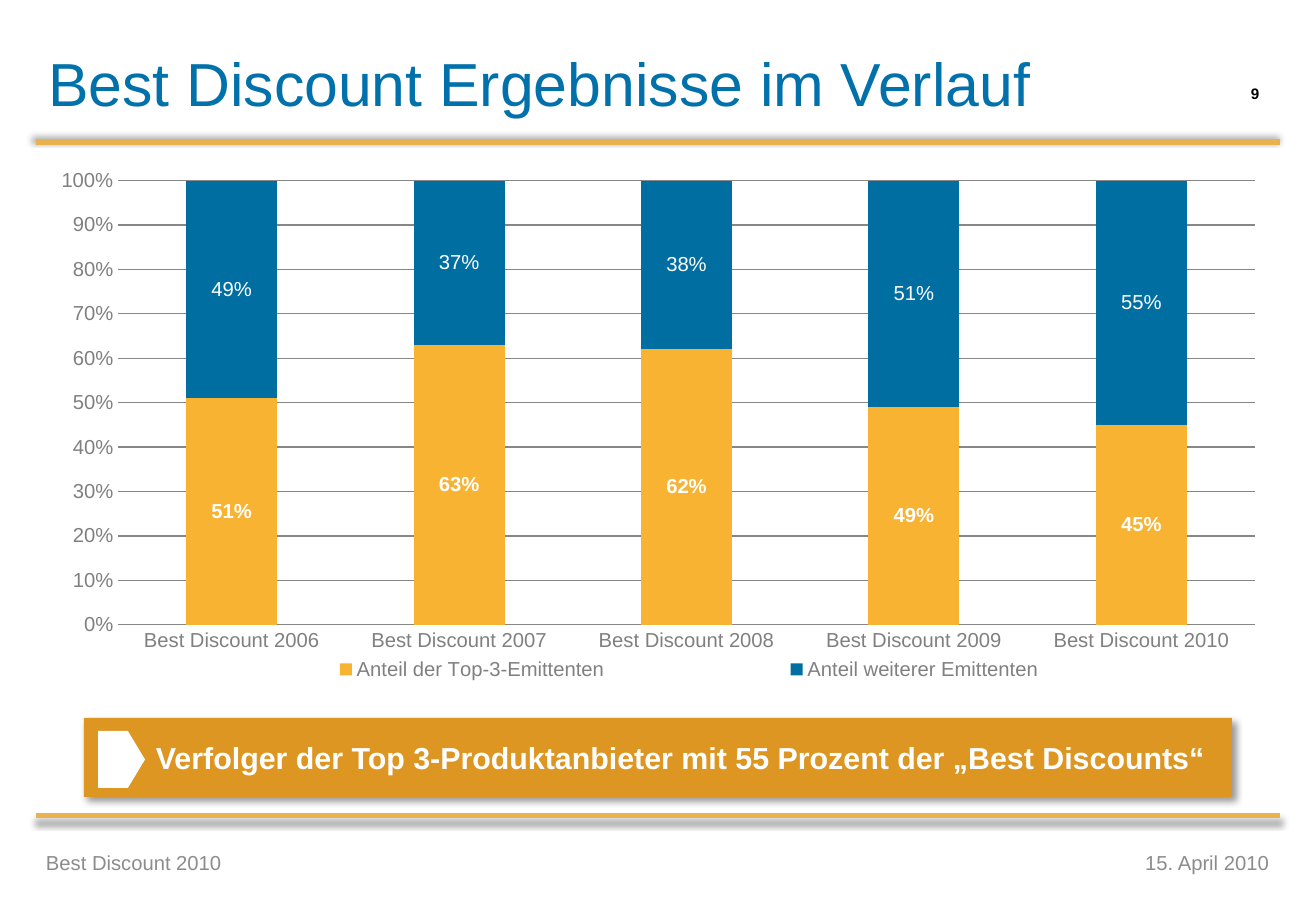
from lxml.etree import SubElement
from pptx import Presentation
from pptx.chart.data import CategoryChartData
from pptx.dml.color import RGBColor
from pptx.enum.chart import XL_CHART_TYPE, XL_LABEL_POSITION, XL_LEGEND_POSITION, XL_TICK_MARK
from pptx.enum.shapes import MSO_CONNECTOR, MSO_SHAPE
from pptx.enum.text import MSO_ANCHOR, PP_ALIGN
from pptx.oxml.ns import qn
from pptx.util import Pt

PX = 7526
FONT = "Arial"
GOLD, GRAY, GRID, WHITE = "E8B24E", "808080", "878787", "FFFFFF"
YEARS = range(2006, 2011)
SERIES = [
    ("Anteil der Top-3-Emittenten", (0.51, 0.63, 0.62, 0.49, 0.45), "F8B333", True),
    ("Anteil weiterer Emittenten", (0.49, 0.37, 0.38, 0.51, 0.55), "006EA1", False),
]
TEXTS = [
    ("Best Discount Ergebnisse im Verlauf", (36, 34, 1134, 96), dict(size=36, color="0071AA")),
    ("15. April 2010", (926, 838, 355, 48), dict(color="8C8C8C", align=PP_ALIGN.RIGHT)),
    ("Best Discount 2010", (34, 838, 417, 48), dict(color="8C8C8C")),
    ("9", (1222, 74, 66, 38), dict(size=9, color="000000", bold=True, align=PP_ALIGN.CENTER)),
]
RULES = [(142, 225), (816, 90)]
CLAIM = "Verfolger der Top 3-Produktanbieter mit 55 Prozent der „Best Discounts“"
PLOT = dict(x=0.066, y=0.04, w=0.914, h=0.818)
LEGEND = dict(x=0.1, y=0.91, w=0.85, h=0.06)


def px(*values):
    return [value * PX for value in values]


def rgb(color):
    return RGBColor.from_string(color)


def style(font, size=12, color=GRAY, bold=False):
    font.name, font.size, font.bold = FONT, Pt(size), bold
    font.color.rgb = rgb(color)


def write(text, shape, align=PP_ALIGN.LEFT, inset=(12, 6, 12, 6), **format):
    frame = shape.text_frame
    frame.word_wrap = True
    frame.vertical_anchor = MSO_ANCHOR.MIDDLE
    frame.margin_left, frame.margin_top, frame.margin_right, frame.margin_bottom = px(*inset)
    line = frame.paragraphs[0]
    line.alignment = align
    run = line.add_run()
    run.text = text
    style(run.font, **format)


def shade(shape, angle):
    effects = SubElement(shape._element.spPr, qn("a:effectLst"))
    shadow = SubElement(effects, qn("a:outerShdw"), blurRad=str(Pt(4)), dist=str(Pt(3)),
                        dir=str(angle * 60000), algn="ctr", rotWithShape="0")
    black = SubElement(shadow, qn("a:srgbClr"), val="000000")
    SubElement(black, qn("a:alpha"), val="40000")


def block(group, kind, box, color):
    shape = group.shapes.add_shape(kind, *px(*box))
    shape.fill.solid()
    shape.fill.fore_color.rgb = rgb(color)
    shape.line.fill.background()
    return shape


def place(parent, box, inner=False):
    layout = parent.find(qn("c:layout"))
    if layout is None:
        layout = SubElement(parent, qn("c:layout"))
        parent.remove(layout)
        parent.insert(1 if parent.tag == qn("c:legend") else 0, layout)
    for child in list(layout):
        layout.remove(child)
    manual = SubElement(layout, qn("c:manualLayout"))
    if inner:
        SubElement(manual, qn("c:layoutTarget"), val="inner")
    for side in "xy":
        SubElement(manual, qn(f"c:{side}Mode"), val="edge")
    for key, value in box.items():
        SubElement(manual, qn(f"c:{key}"), val=str(value))


def draw(slide):
    data = CategoryChartData(number_format="0%")
    data.categories = [f"Best Discount {year}" for year in YEARS]
    for name, values, _, _ in SERIES:
        data.add_series(name, values)
    chart = slide.shapes.add_chart(XL_CHART_TYPE.COLUMN_STACKED, *px(36, 159, 1244, 543), data).chart
    chart.has_title = False
    style(chart.font, size=10, color="000000")
    chart.has_legend = True
    chart.legend.position = XL_LEGEND_POSITION.BOTTOM
    chart.legend.include_in_layout = False
    style(chart.legend.font)
    place(chart.legend._element, LEGEND)
    place(chart._chartSpace.chart.plotArea, PLOT, inner=True)

    for axis in (chart.category_axis, chart.value_axis):
        axis.major_tick_mark = axis.minor_tick_mark = XL_TICK_MARK.NONE
        style(axis.tick_labels.font)
    chart.category_axis.format.line.color.rgb = rgb(GRID)
    axis = chart.value_axis
    axis.minimum_scale, axis.maximum_scale, axis.major_unit = 0, 1, 0.1
    axis.tick_labels.number_format = "0%"
    axis.tick_labels.number_format_is_linked = False
    axis.format.line.fill.background()
    axis.major_gridlines.format.line.color.rgb = rgb(GRID)
    axis.major_gridlines.format.line.width = Pt(0.75)

    plot = chart.plots[0]
    plot.gap_width, plot.overlap, plot.vary_by_categories = 150, 100, False
    for series, (_, _, color, bold) in zip(plot.series, SERIES):
        series.format.fill.solid()
        series.format.fill.fore_color.rgb = rgb(color)
        labels = series.data_labels
        labels.show_value = True
        labels.position = XL_LABEL_POSITION.CENTER
        labels.number_format = "0%"
        labels.number_format_is_linked = False
        style(labels.font, color=WHITE, bold=bold)


def main():
    deck = Presentation()
    deck.slide_width, deck.slide_height = px(1316, 911)
    slide = deck.slides.add_slide(deck.slide_layouts[6])
    for y, angle in RULES:
        rule = slide.shapes.add_connector(MSO_CONNECTOR.STRAIGHT, *px(36, y, 1280, y))
        rule.line.color.rgb = rgb(GOLD)
        rule.line.width = Pt(3)
        shade(rule, angle)
    for text, box, format in TEXTS:
        write(text, slide.shapes.add_textbox(*px(*box)), **format)

    group = slide.shapes.add_group_shape()
    banner = block(group, MSO_SHAPE.RECTANGLE, (84, 718, 1148, 79), "DD9621")
    shade(banner, 45)
    write(CLAIM, banner, inset=(72, 10, 10, 10), size=18, color=WHITE, bold=True)
    arrow = block(group, MSO_SHAPE.PENTAGON, (98, 731, 47, 57), WHITE)
    arrow.adjustments[0] = 0.365
    arrow.shadow.inherit = False
    draw(slide)
    deck.save("out.pptx")


if __name__ == "__main__":
    main()
